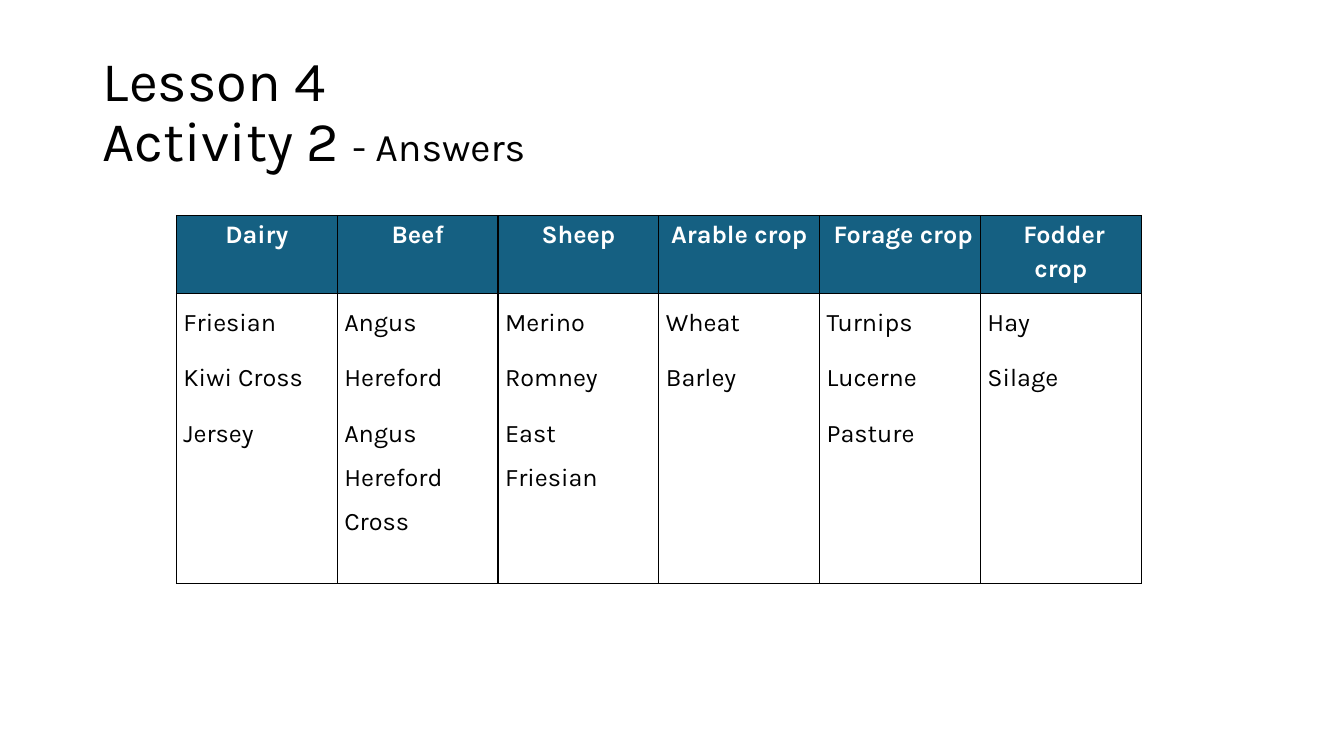
from dataclasses import dataclass

from lxml.etree import SubElement as Sub
from pptx import Presentation
from pptx.dml.color import RGBColor as Rgb
from pptx.enum.text import MSO_ANCHOR as Anchor, MSO_AUTO_SIZE as Auto, PP_ALIGN as Align
from pptx.oxml import parse_xml
from pptx.oxml.ns import nsdecls, qn
from pptx.util import Inches, Pt

HUES = {"ink": "000000", "head": "156082", "paper": "FFFFFF"}
FACE = "Karla"


@dataclass
class Group:
    head: str
    items: list[str]


GROUPS = [
    Group("Dairy", ["Friesian", "Kiwi Cross", "Jersey"]),
    Group("Beef", ["Angus", "Hereford", "Angus Hereford Cross"]),
    Group(" Sheep ", ["Merino", "Romney", "East Friesian"]),
    Group("Arable crop", ["Wheat", "Barley"]),
    Group(" Forage crop", ["Turnips", "Lucerne", "Pasture"]),
    Group(" Fodder crop", ["Hay", "Silage"]),
]


def apply(thing, values: dict) -> None:
    for name, value in values.items():
        setattr(thing, name, value)


def write(para, text: str, size: int, hue: str, bold: bool = False) -> None:
    run = para.add_run()
    run.text = text
    apply(run.font, {"name": FACE, "size": Pt(size), "bold": bold})
    run.font.color.rgb = Rgb.from_string(HUES[hue])


def edge(cell) -> None:
    """Put a thin line on all four sides of a cell."""
    props = cell._tc.get_or_add_tcPr()
    for spot, side in enumerate("LRTB"):
        props.insert(spot, parse_xml(
            f'<a:ln{side} w="12700" {nsdecls("a")}><a:solidFill>'
            f'<a:srgbClr val="{HUES["ink"]}"/></a:solidFill></a:ln{side}>'))


def fill(cell, lines: list[str], head: bool) -> None:
    side = Inches(0.07)
    apply(cell, {"margin_left": side, "margin_right": side,
                 "margin_top": 0, "margin_bottom": 0})
    cell.fill.solid()
    cell.fill.fore_color.rgb = Rgb.from_string(HUES["head" if head else "paper"])
    edge(cell)
    frame = cell.text_frame
    for spot, line in enumerate(lines):
        para = frame.add_paragraph() if spot else frame.paragraphs[0]
        apply(para, {"alignment": Align.CENTER if head else Align.LEFT,
                     "line_spacing": 1.15 if head else 1.5,
                     "space_after": Pt(8)})
        write(para, line, 18, "paper" if head else "ink", head)


def add_title(slide) -> None:
    title = slide.shapes.title
    apply(title, {"left": Inches(0.92), "top": Inches(0.4),
                  "width": Inches(11.5), "height": Inches(1.45)})
    frame = title.text_frame
    apply(frame, {"word_wrap": True, "auto_size": Auto.NONE,
                  "vertical_anchor": Anchor.MIDDLE})
    para = frame.paragraphs[0]
    apply(para, {"alignment": Align.LEFT, "line_spacing": 0.9})
    write(para, "Lesson 4", 40, "ink")
    para.add_line_break()
    Sub(para._p.find(qn("a:br")), qn("a:rPr"), sz="4000")
    write(para, "Activity 2 ", 40, "ink")
    write(para, "- Answers", 28, "ink")


def add_grid(slide) -> None:
    wide = Inches(9.57)
    table = slide.shapes.add_table(2, len(GROUPS), Inches(1.75), Inches(2.14),
                                   wide, Inches(3.65)).table
    apply(table, {"first_row": True, "horz_banding": False})
    for row, high in zip(table.rows, (0.77, 2.88)):
        row.height = Inches(high)
    for col, group in enumerate(GROUPS):
        table.columns[col].width = wide // len(GROUPS)
        fill(table.cell(0, col), [group.head], True)
        fill(table.cell(1, col), group.items, False)


def main() -> None:
    deck = Presentation()
    apply(deck, {"slide_width": Inches(13.33), "slide_height": Inches(7.5)})
    slide = deck.slides.add_slide(deck.slide_layouts[5])  # title only
    add_title(slide)
    add_grid(slide)
    deck.save("out.pptx")


if __name__ == "__main__":
    main()
